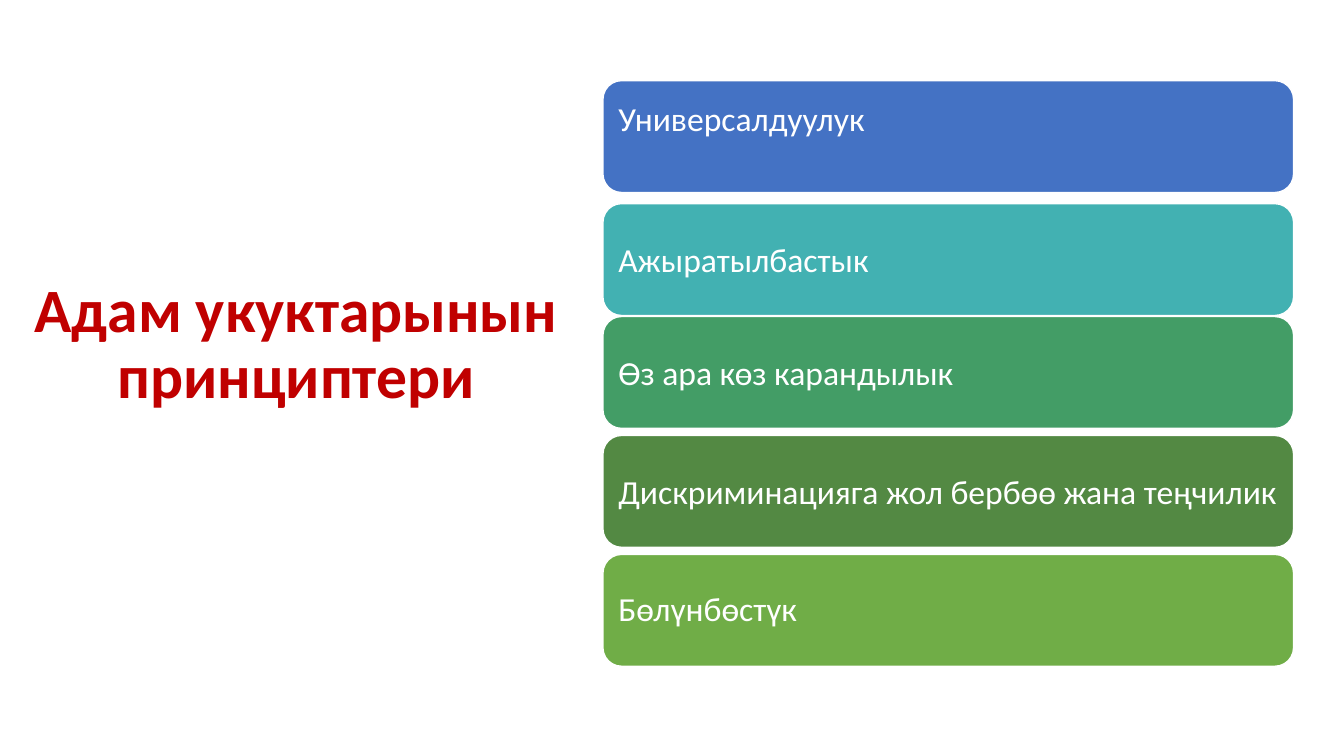
"""Build a slide listing the principles of human rights in Kyrgyz."""
from pptx import Presentation
from pptx.dml.color import RGBColor
from pptx.enum.shapes import MSO_SHAPE
from pptx.enum.text import MSO_ANCHOR, PP_ALIGN
from pptx.util import Inches, Pt

COLORS = {
    "title": "C00000",
    "white": "FFFFFF",
    "blue": "4472C4",
    "teal": "42B1B2",
    "green": "439D66",
    "dark": "538943",
    "light": "70AD47",
}


def rgb(name):
    return RGBColor.from_string(COLORS[name])


def add_text(tf, text, size, color, align, spacing, bold=False):
    tf.word_wrap = True
    tf.vertical_anchor = MSO_ANCHOR.MIDDLE
    p = tf.paragraphs[0]
    p.alignment = align
    p.line_spacing = spacing
    r = p.add_run()
    r.text = text
    r.font.name = "Calibri"
    r.font.size = Pt(size)
    r.font.bold = bold
    r.font.color.rgb = rgb(color)


prs = Presentation()
prs.slide_width = Inches(13.33)
prs.slide_height = Inches(7.5)
s = prs.slides.add_slide(prs.slide_layouts[6])

title = s.shapes.add_textbox(Inches(0.12), Inches(2.91), Inches(5.64), Inches(1.04))
add_text(title.text_frame, "Адам укуктарынын принциптери", 44, "title",
         PP_ALIGN.CENTER, 0.9, bold=True)

principles = [
    ("Универсалдуулук", "blue", 0.8, 0.47, 1.0),
    ("Ажыратылбастык", "teal", 2.02, 0.1, 1.0),
    ("Өз ара көз карандылык", "green", 3.14, 0.1, 1.0),
    ("Дискриминацияга жол бербөө жана теңчилик", "dark", 4.32, 0.1, 1.0),
    ("Бөлүнбөстүк", "light", 5.5, 0.1, 0.9),
]
for text, color, top, bottom_inset, spacing in principles:
    sp = s.shapes.add_shape(MSO_SHAPE.ROUNDED_RECTANGLE, Inches(5.98), Inches(top),
                            Inches(6.85), Inches(1.11))
    sp.shadow.inherit = False
    sp.fill.solid()
    sp.fill.fore_color.rgb = rgb(color)
    sp.line.color.rgb = rgb("white")
    sp.line.width = Pt(1)
    tf = sp.text_frame
    tf.margin_left = tf.margin_right = tf.margin_top = Inches(0.1)
    tf.margin_bottom = Inches(bottom_inset)
    add_text(tf, text, 24, "white", PP_ALIGN.LEFT, spacing)

prs.save("out.pptx")
